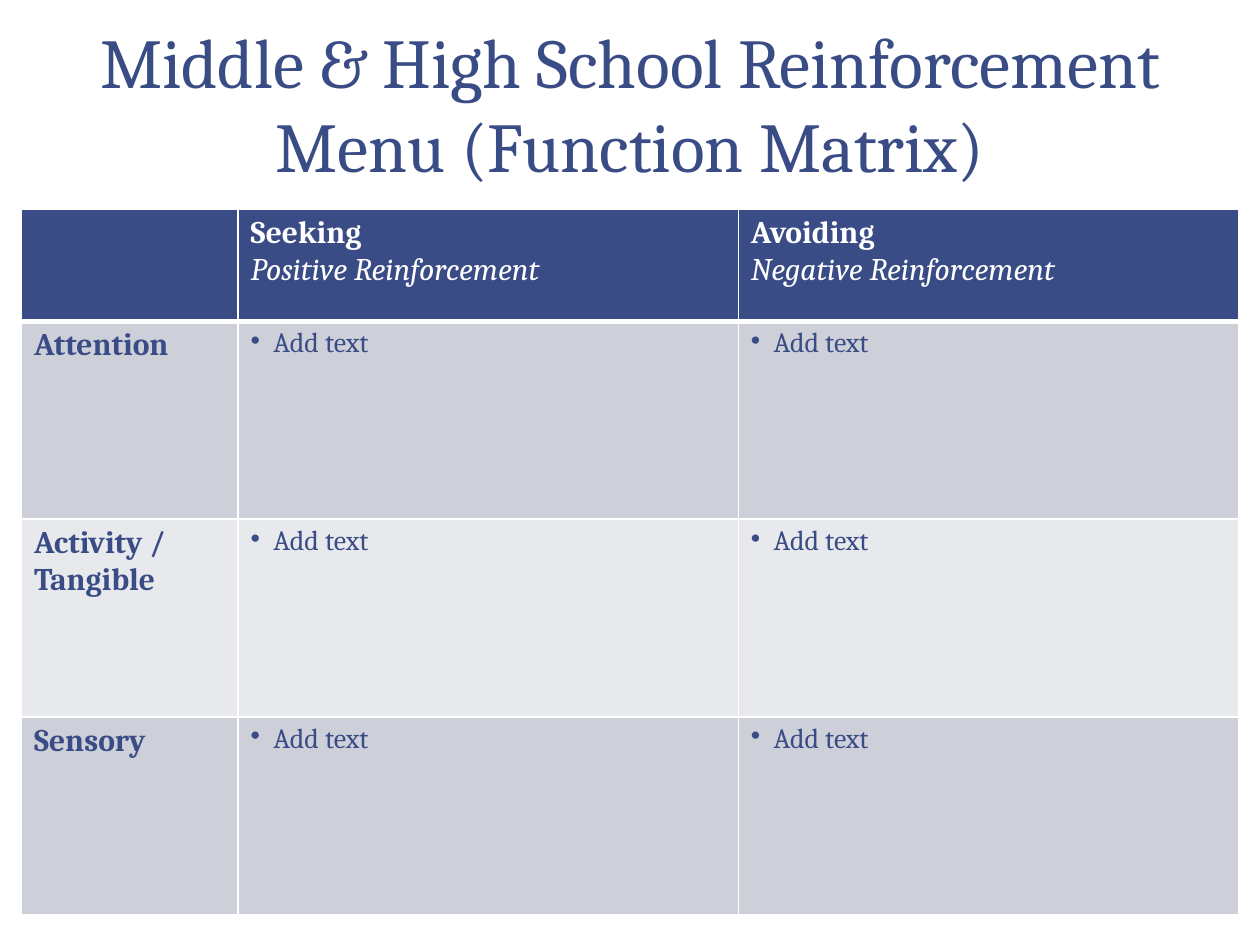
import dataclasses

import lxml.etree
import pptx
import pptx.dml.color
import pptx.enum.text
import pptx.oxml.ns
import pptx.util


@dataclasses.dataclass(frozen=True)
class Theme:
    """Colours, font and type sizes of the slide."""
    font: str = "Cambria"
    navy: str = "3A4C85"
    white: str = "FFFFFF"
    bands: tuple = ("CED0D9", "E8E9ED")
    title_size: int = 40
    label_size: int = 18
    entry_size: int = 16
    thin_line: int = 1
    thick_line: int = 3


THEME = Theme()
HEADINGS = (
    ("Seeking", "Positive Reinforcement"),
    ("Avoiding", "Negative Reinforcement"),
)
FUNCTIONS = ("Attention", "Activity / Tangible", "Sensory")
ENTRY = "Add text"
COLUMN_WIDTHS = (1.72, 3.97, 3.97)
ROW_HEIGHTS = (0.89, 1.57, 1.57, 1.57)


def add_span(para, text, size, color, bold=False, italic=False):
    """Add one formatted run to a paragraph."""
    span = para.add_run()
    span.text = text
    span.font.name = THEME.font
    span.font.size = pptx.util.Pt(size)
    span.font.bold = bold
    span.font.italic = italic
    span.font.color.rgb = pptx.dml.color.RGBColor.from_string(color)


def add_bullet(para):
    """Give a paragraph a hanging round bullet."""
    properties = para._p.get_or_add_pPr()
    indent = pptx.util.Inches(0.18)
    properties.set("marL", str(indent))
    properties.set("indent", str(-indent))
    bullet = lxml.etree.SubElement(properties, pptx.oxml.ns.qn("a:buChar"))
    bullet.set("char", "•")


def add_border(cell, side, width):
    """Draw a white line on one side of a cell."""
    properties = cell._tc.get_or_add_tcPr()
    line = lxml.etree.SubElement(properties, pptx.oxml.ns.qn(f"a:ln{side}"))
    line.set("w", str(pptx.util.Pt(width)))
    fill = lxml.etree.SubElement(line, pptx.oxml.ns.qn("a:solidFill"))
    color = lxml.etree.SubElement(fill, pptx.oxml.ns.qn("a:srgbClr"))
    color.set("val", THEME.white)


def style_cell(cell, row):
    """Set the borders and fill that belong to a table row."""
    thick_side = {0: "B", 1: "T"}.get(row)
    for side in "LRTB":
        width = THEME.thick_line if side == thick_side else THEME.thin_line
        add_border(cell, side, width)
    color = THEME.bands[(row - 1) % 2] if row else THEME.navy
    cell.fill.solid()
    cell.fill.fore_color.rgb = pptx.dml.color.RGBColor.from_string(color)


def add_title(page, text):
    """Place and fill the title placeholder."""
    box = page.shapes.title
    box.left, box.top = pptx.util.Inches(0), pptx.util.Inches(0.02)
    box.width, box.height = pptx.util.Inches(10), pptx.util.Inches(1.58)
    frame = box.text_frame
    frame.auto_size = pptx.enum.text.MSO_AUTO_SIZE.NONE
    frame.vertical_anchor = pptx.enum.text.MSO_ANCHOR.MIDDLE
    para = frame.paragraphs[0]
    para.alignment = pptx.enum.text.PP_ALIGN.CENTER
    add_span(para, text, THEME.title_size, THEME.navy)


def add_matrix(page):
    """Add the empty, styled function matrix and return its table."""
    table = page.shapes.add_table(
        len(ROW_HEIGHTS), len(COLUMN_WIDTHS),
        pptx.util.Inches(0.17), pptx.util.Inches(1.66),
        pptx.util.Inches(sum(COLUMN_WIDTHS)),
        pptx.util.Inches(sum(ROW_HEIGHTS)),
    ).table
    for column, width in zip(table.columns, COLUMN_WIDTHS):
        column.width = pptx.util.Inches(width)
    for index, (row, height) in enumerate(zip(table.rows, ROW_HEIGHTS)):
        row.height = pptx.util.Inches(height)
        for cell in row.cells:
            style_cell(cell, index)
    return table


def fill_headings(table):
    """Write the two-line column headings."""
    for column, (name, kind) in enumerate(HEADINGS, start=1):
        frame = table.cell(0, column).text_frame
        add_span(frame.paragraphs[0], name, THEME.label_size, THEME.white, bold=True)
        add_span(frame.add_paragraph(), kind, THEME.label_size, THEME.white, italic=True)


def fill_functions(table):
    """Write each function label and its bulleted entries."""
    for row, label in enumerate(FUNCTIONS, start=1):
        para = table.cell(row, 0).text_frame.paragraphs[0]
        add_span(para, label, THEME.label_size, THEME.navy, bold=True)
        for column in range(1, len(COLUMN_WIDTHS)):
            para = table.cell(row, column).text_frame.paragraphs[0]
            add_bullet(para)
            add_span(para, ENTRY, THEME.entry_size, THEME.navy)


def main():
    """Build and save the slide."""
    deck = pptx.Presentation()
    deck.slide_width = pptx.util.Inches(10)
    deck.slide_height = pptx.util.Inches(7.5)
    page = deck.slides.add_slide(deck.slide_layouts.get_by_name("Title Only"))
    add_title(page, "Middle & High School Reinforcement Menu (Function Matrix)")
    table = add_matrix(page)
    fill_headings(table)
    fill_functions(table)
    deck.save("out.pptx")


if __name__ == "__main__":
    main()
